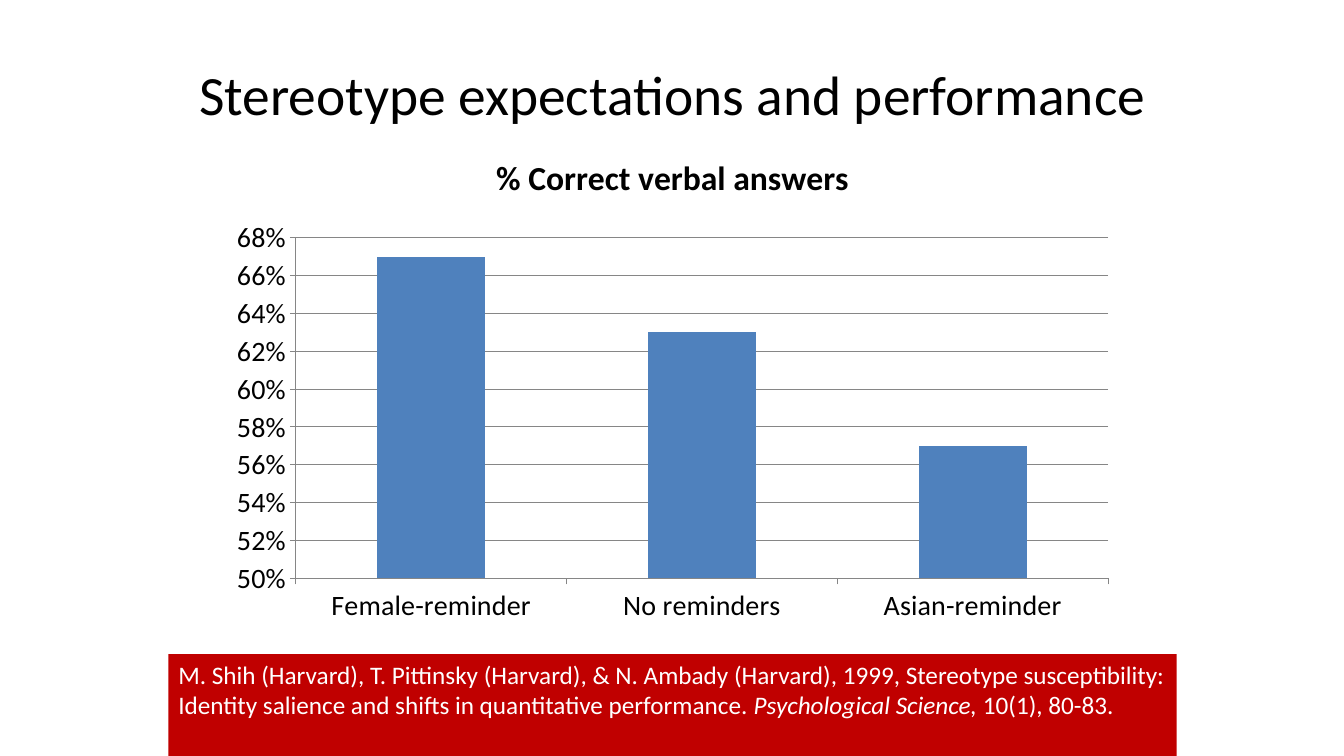
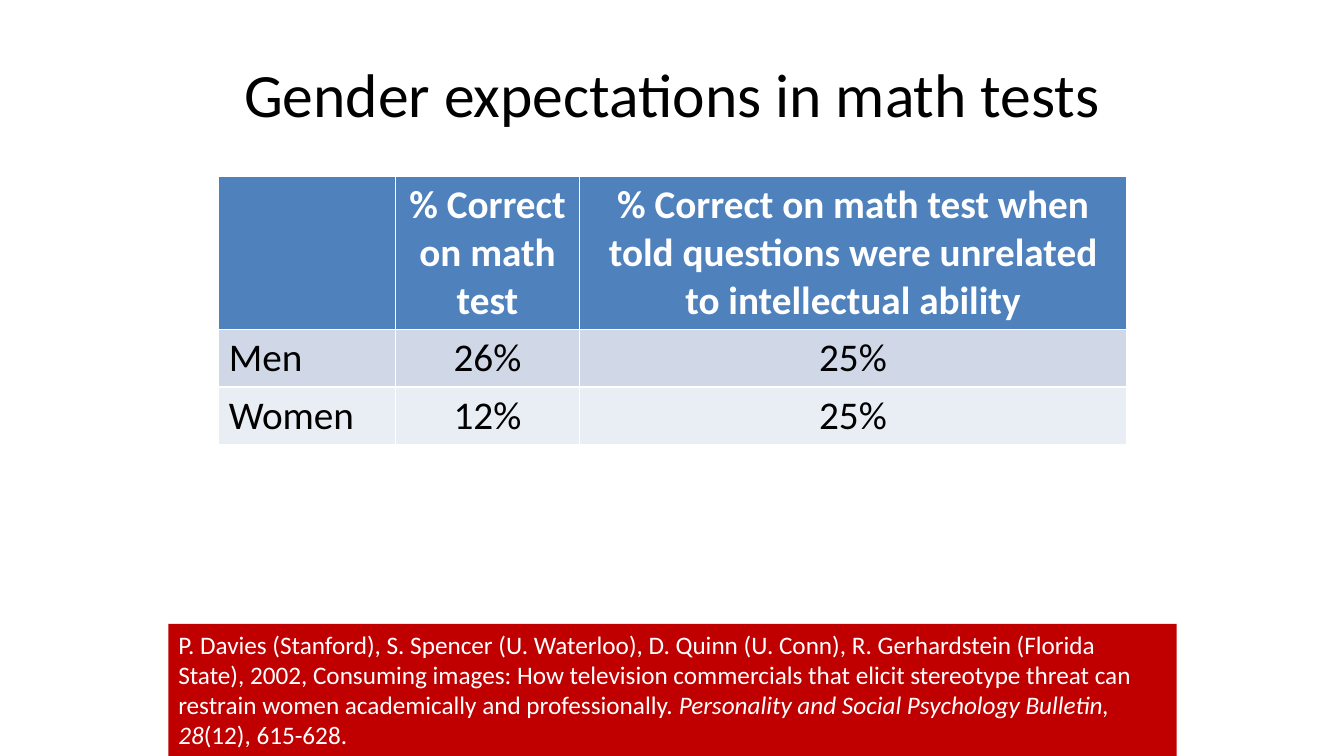
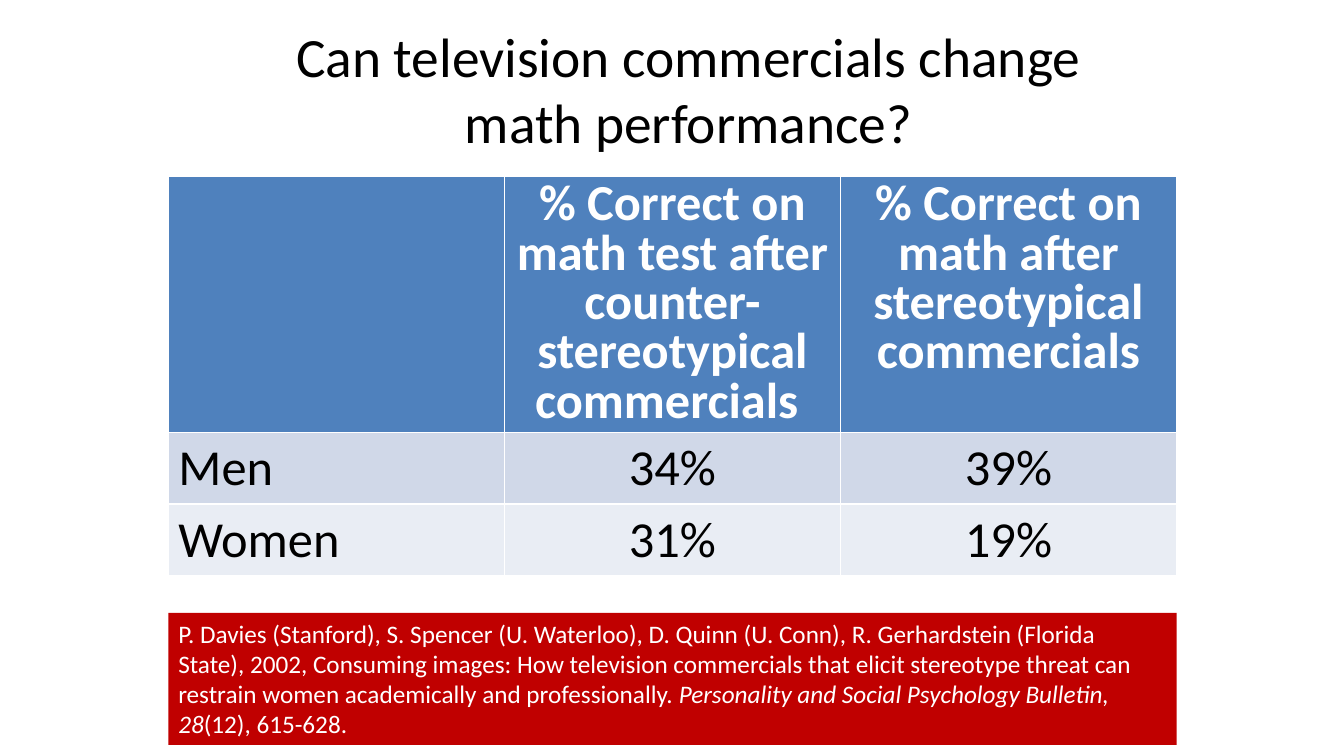
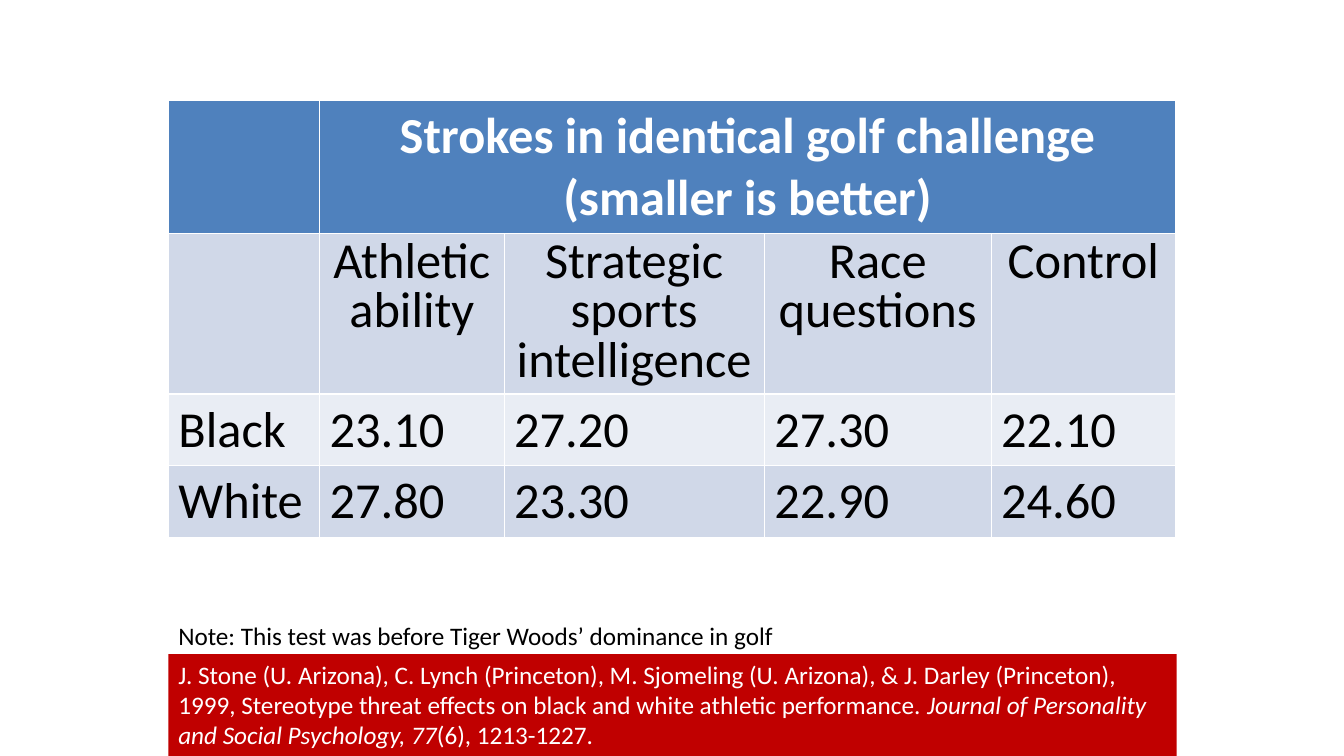
from dataclasses import dataclass

from pptx import Presentation
from pptx.chart import data as chart_data
from pptx.dml.color import RGBColor
from pptx.enum import chart as chart_enum, text
from pptx.slide import Slide
from pptx.text.text import Font, TextFrame, _Paragraph
from pptx.util import Inches, Pt

FONT = "Calibri"
BLACK = RGBColor(0x00, 0x00, 0x00)
WHITE = RGBColor(0xFF, 0xFF, 0xFF)
BLUE = RGBColor(0x4F, 0x81, 0xBD)
BAND_DARK = RGBColor(0xD0, 0xD8, 0xE8)
BAND_LIGHT = RGBColor(0xE9, 0xED, 0xF4)
CITATION_RED = RGBColor(0xC0, 0x00, 0x00)
AXIS_GRAY = RGBColor(0x86, 0x86, 0x86)

CONTENT_LEFT = 1.67
CONTENT_WIDTH = 10
TITLE_HEIGHT = 1.25
NOTE_SIZE = 18


@dataclass(frozen=True)
class Box:
    """A place on the slide, in inches."""
    left: float
    top: float
    width: float
    height: float

    def lengths(self) -> list[int]:
        return [Inches(value) for value in (self.left, self.top, self.width, self.height)]


@dataclass(frozen=True)
class Citation:
    authors_and_article: str
    journal: str
    pages: str


@dataclass(frozen=True)
class ResultTable:
    left: float
    top: float
    column_widths: list[float]
    row_heights: list[float]
    cells: list[list[str]]
    size: float
    centered_rows: tuple[int, ...]
    tight_row: int | None = None
    merge_header: bool = False


STEREOTYPE_STUDY = Citation(
    "M. Shih (Harvard), T. Pittinsky (Harvard), & N. Ambady (Harvard), 1999, Stereotype "
    "susceptibility: Identity salience and shifts in quantitative performance. ",
    "Psychological Science, ", "10(1), 80-83.")
COMMERCIALS_STUDY = Citation(
    "P. Davies (Stanford), S. Spencer (U. Waterloo), D. Quinn (U. Conn), R. Gerhardstein "
    "(Florida State), 2002, Consuming images: How television commercials that elicit "
    "stereotype threat can restrain women academically and professionally. ",
    "Personality and Social Psychology Bulletin, 28", "(12), 615-628.")
GOLF_STUDY = Citation(
    "J. Stone (U. Arizona), C. Lynch (Princeton), M. Sjomeling (U. Arizona), & J. Darley "
    "(Princeton), 1999, Stereotype threat effects on black and white athletic performance. ",
    "Journal of Personality and Social Psychology, 77", "(6), 1213-1227.")

MATH_TABLE = ResultTable(
    2.17, 1.75, [1.75, 1.83, 5.42], [1.52, 0.57, 0.57],
    [["", "% Correct on math test",
      "% Correct on math test when told questions were unrelated to intellectual ability"],
     ["Men", "26%", "25%"],
     ["Women", "12%", "25%"]],
    size=28, centered_rows=(0, 1, 2))
COMMERCIALS_TABLE = ResultTable(
    CONTENT_LEFT, 1.75, [CONTENT_WIDTH / 3] * 3, [2.54, 0.71, 0.71],
    [["", "% Correct on math test after counter-stereotypical commercials ",
      "% Correct on math after stereotypical commercials"],
     ["Men", "34%", "39%"],
     ["Women", "31%", "19%"]],
    size=36, centered_rows=(0, 1, 2), tight_row=0)
GOLF_TABLE = ResultTable(
    CONTENT_LEFT, 1, [1.5, 1.83, 2.58, 2.25, 1.83], [1.32, 1.59, 0.71, 0.71],
    [["", "Strokes in identical golf challenge\n(smaller is better)"],
     ["", "Athletic ability", "Strategic sports intelligence", "Race questions", "Control"],
     ["Black", "23.10", "27.20", "27.30", "22.10"],
     ["White", "27.80", "23.30", "22.90", "24.60"]],
    size=36, centered_rows=(0, 1), tight_row=1, merge_header=True)


def style_font(font: Font, size: float, color: RGBColor = BLACK, bold: bool = False) -> None:
    font.name = FONT
    font.size = Pt(size)
    font.bold = bold
    font.color.rgb = color


def style_runs(paragraph: _Paragraph, size: float, color: RGBColor = BLACK,
               bold: bool = False) -> None:
    for run in paragraph.runs:
        style_font(run.font, size, color, bold)


def add_text_frame(slide: Slide, box: Box, fill: RGBColor | None = None) -> TextFrame:
    shape = slide.shapes.add_textbox(*box.lengths())
    if fill is not None:
        shape.fill.solid()
        shape.fill.fore_color.rgb = fill
    shape.text_frame.word_wrap = True
    return shape.text_frame


def add_title(slide: Slide, title: str, left: float, top: float, width: float,
              size: float = 39.6) -> None:
    frame = add_text_frame(slide, Box(left, top, width, TITLE_HEIGHT))
    frame.vertical_anchor = text.MSO_ANCHOR.MIDDLE
    frame.text = title
    paragraph = frame.paragraphs[0]
    paragraph.alignment = text.PP_ALIGN.CENTER
    style_runs(paragraph, size)


def add_citation(slide: Slide, citation: Citation, top: float, height: float) -> None:
    """Draw the red band that names the study."""
    frame = add_text_frame(slide, Box(CONTENT_LEFT, top, CONTENT_WIDTH, height), CITATION_RED)
    paragraph = frame.paragraphs[0]
    for part in (citation.authors_and_article, citation.journal, citation.pages):
        run = paragraph.add_run()
        run.text = part
        run.font.italic = part == citation.journal
    style_runs(paragraph, NOTE_SIZE, WHITE)


def add_note(slide: Slide, note: str, top: float) -> None:
    frame = add_text_frame(slide, Box(CONTENT_LEFT, top, CONTENT_WIDTH, 0.4))
    frame.text = note
    style_runs(frame.paragraphs[0], NOTE_SIZE)


def add_result_table(slide: Slide, result: ResultTable) -> None:
    box = Box(result.left, result.top, sum(result.column_widths), sum(result.row_heights))
    table = slide.shapes.add_table(
        len(result.row_heights), len(result.column_widths), *box.lengths()).table
    for column, width in zip(table.columns, result.column_widths):
        column.width = Inches(width)
    for row, height in zip(table.rows, result.row_heights):
        row.height = Inches(height)
    if result.merge_header:
        table.cell(0, 1).merge(table.cell(0, len(result.column_widths) - 1))

    for row_index, row in enumerate(table.rows):
        is_header = row_index == 0
        fill = BLUE if is_header else BAND_DARK if row_index % 2 else BAND_LIGHT
        for cell in row.cells:
            cell.fill.solid()
            cell.fill.fore_color.rgb = fill
        for column_index, value in enumerate(result.cells[row_index]):
            if not value:
                continue
            frame = row.cells[column_index].text_frame
            frame.text = value
            for paragraph in frame.paragraphs:
                if column_index > 0 and row_index in result.centered_rows:
                    paragraph.alignment = text.PP_ALIGN.CENTER
                if row_index == result.tight_row:
                    paragraph.line_spacing = 0.8
                style_runs(paragraph, result.size, WHITE if is_header else BLACK, is_header)


def add_answers_chart(slide: Slide, box: Box) -> None:
    title = "% Correct verbal answers"
    answers = chart_data.CategoryChartData(number_format="0%")
    answers.categories = ["Female-reminder", "No reminders", "Asian-reminder"]
    answers.add_series(title, [0.67, 0.63, 0.57])
    chart = slide.shapes.add_chart(
        chart_enum.XL_CHART_TYPE.COLUMN_CLUSTERED, *box.lengths(), answers).chart
    style_font(chart.font, 10)
    chart.has_legend = False
    chart.has_title = True
    chart.chart_title.text_frame.text = title
    style_runs(chart.chart_title.text_frame.paragraphs[0], 24, bold=True)

    plot = chart.plots[0]
    plot.gap_width = 150
    plot.vary_by_categories = False
    bars = plot.series[0].format.fill
    bars.solid()
    bars.fore_color.rgb = BLUE

    value_axis = chart.value_axis
    value_axis.minimum_scale = 0.5
    value_axis.maximum_scale = 0.68
    value_axis.major_unit = 0.02
    value_axis.has_major_gridlines = True
    value_axis.tick_labels.number_format = "0%"
    value_axis.tick_labels.number_format_is_linked = False
    for axis in (chart.category_axis, value_axis):
        style_font(axis.tick_labels.font, 20)
        axis.major_tick_mark = chart_enum.XL_TICK_MARK.OUTSIDE
    for axis_part in (chart.category_axis, value_axis, value_axis.major_gridlines):
        axis_part.format.line.color.rgb = AXIS_GRAY
        axis_part.format.line.width = Pt(0.75)


def main() -> None:
    presentation = Presentation()
    presentation.slide_width = Inches(13.33)
    presentation.slide_height = Inches(7.5)
    blank = presentation.slide_layouts[6]

    slide = presentation.slides.add_slide(blank)
    add_title(slide, "Stereotype expectations and performance", CONTENT_LEFT, 0.3, CONTENT_WIDTH)
    add_citation(slide, STEREOTYPE_STUDY, 6.49, 1.01)
    add_answers_chart(slide, Box(2.17, 1.33, 9, 4.95))

    slide = presentation.slides.add_slide(blank)
    add_title(slide, "Gender expectations in math tests", 0.67, 0.3, 12, size=44)
    add_result_table(slide, MATH_TABLE)
    add_citation(slide, COMMERCIALS_STUDY, 6.19, 1.31)

    slide = presentation.slides.add_slide(blank)
    add_result_table(slide, COMMERCIALS_TABLE)
    add_citation(slide, COMMERCIALS_STUDY, 6.08, 1.31)
    add_title(slide, "Can television commercials change math performance?", 2.33, 0.25, 9)

    slide = presentation.slides.add_slide(blank)
    add_result_table(slide, GOLF_TABLE)
    add_citation(slide, GOLF_STUDY, 6.49, 1.01)
    add_note(slide, "Note: This test was before Tiger Woods’ dominance in golf", 6.1)

    presentation.save("out.pptx")


if __name__ == "__main__":
    main()
